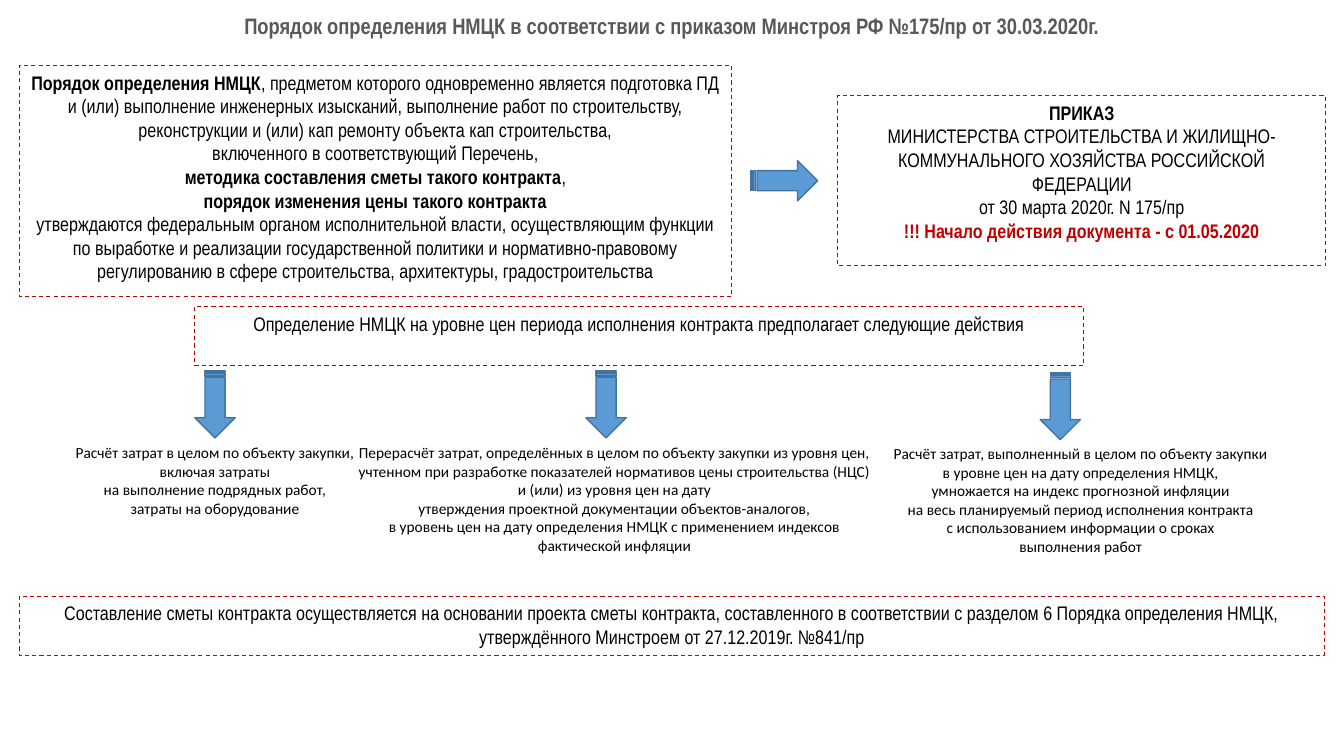
"""Build a slide on how the initial maximum contract price is set."""
from pptx import Presentation
from pptx.dml.color import RGBColor
from pptx.enum.dml import MSO_LINE
from pptx.enum.shapes import MSO_SHAPE
from pptx.enum.text import MSO_ANCHOR, MSO_AUTO_SIZE, PP_ALIGN
from pptx.util import Pt

RECT, ARROW = MSO_SHAPE.RECTANGLE, MSO_SHAPE.STRIPED_RIGHT_ARROW
TOP, BOTTOM = MSO_ANCHOR.TOP, MSO_ANCHOR.BOTTOM
GROW, FIXED = MSO_AUTO_SIZE.SHAPE_TO_FIT_TEXT, MSO_AUTO_SIZE.NONE
DASH, CENTER = MSO_LINE.DASH, PP_ALIGN.CENTER

COLORS = {"black": "000000", "gray": "595959", "red": "C00000",
          "blue": "5B9BD5", "edge": "43739E"}
RUNS = {"plain": (False, "black"), "bold": (True, "black"),
        "red": (True, "red"), "title": (True, "gray")}
NARROW = {"name": "Arial Narrow", "size": Pt(14)}
HEAD = {"name": "Arial Narrow", "size": Pt(16)}
SMALL = {"name": "Calibri", "size": Pt(11)}


def color(name):
    return RGBColor.from_string(COLORS[name])


def write(shape, lines, form, frame):
    """Fill a shape with centred lines, each a string or a list of runs."""
    body = shape.text_frame
    for key, value in frame.items():
        setattr(body, key, value)
    for i, line in enumerate(lines):
        para = body.paragraphs[0] if i == 0 else body.add_paragraph()
        para.alignment = CENTER
        runs = [(line, "plain")] if isinstance(line, str) else line
        for text, kind in runs:
            run = para.add_run()
            run.text = text
            bold, tint = RUNS[kind]
            for key, value in {**form, "bold": bold}.items():
                setattr(run.font, key, value)
            run.font.color.rgb = color(tint)


deck = Presentation()
deck.slide_width, deck.slide_height = Pt(960), Pt(540)
slide = deck.slides.add_slide(deck.slide_layouts[6])
shapes = slide.shapes

title = shapes.add_textbox(0, 0, Pt(960), Pt(31.7))
write(title, [[("Порядок определения НМЦК в соответствии с приказом Минстроя РФ "
                "№175/пр от 30.03.2020г.", "title")]], HEAD,
      {"word_wrap": True, "vertical_anchor": BOTTOM, "auto_size": FIXED})
title.text_frame.paragraphs[0].line_spacing = 0.9

boxes = [
    ((598.5, 68.5, 348.5, 121.5), [
        [("ПРИКАЗ", "bold")],
        "МИНИСТЕРСТВА СТРОИТЕЛЬСТВА И ЖИЛИЩНО-КОММУНАЛЬНОГО ХОЗЯЙСТВА "
        "РОССИЙСКОЙ ФЕДЕРАЦИИ",
        "от 30 марта 2020г. N 175/пр",
        [("!!! Начало действия документа - с 01.05.2020", "red")]]),
    ((13.7, 47, 509, 165), [
        [("Порядок определения НМЦК", "bold"),
         (", предметом которого одновременно является подготовка ПД и (или) "
          "выполнение инженерных изысканий, выполнение работ по строительству, "
          "реконструкции и (или) кап ремонту объекта кап строительства,", "plain")],
        "включенного в соответствующий Перечень,",
        [("методика составления сметы такого контракта", "bold"), (",", "plain")],
        [("порядок изменения цены такого контракта", "bold")],
        "утверждаются федеральным органом исполнительной власти, осуществляющим "
        "функции по выработке и реализации государственной политики и "
        "нормативно-правовому регулированию в сфере строительства, архитектуры, "
        "градостроительства"]),
    ((139, 219, 635, 42), [
        "Определение НМЦК на уровне цен периода исполнения контракта "
        "предполагает следующие действия"]),
    ((13.7, 426, 932.5, 42), [
        "Составление сметы контракта осуществляется на основании проекта сметы "
        "контракта, составленного в соответствии с разделом 6 Порядка определения "
        "НМЦК, утверждённого Минстроем от 27.12.2019г. №841/пр"]),
]
for place, lines in boxes:
    box = shapes.add_shape(RECT, *map(Pt, place))
    box.shadow.inherit = False
    box.fill.background()
    box.line.color.rgb = color("red")
    box.line.width = Pt(0.75)
    box.line.dash_style = DASH
    write(box, lines, NARROW, {"word_wrap": True, "vertical_anchor": TOP})

for left, top, turn in [(536.3, 114.7, 0), (129.7, 274.5, 90),
                        (409, 274.5, 90), (733.5, 275.8, 90)]:
    arrow = shapes.add_shape(ARROW, Pt(left), Pt(top), Pt(47.8), Pt(28.8))
    arrow.rotation = turn
    arrow.shadow.inherit = False
    arrow.fill.solid()
    arrow.fill.fore_color.rgb = color("blue")
    arrow.line.color.rgb = color("edge")
    arrow.line.width = Pt(1)

steps = [
    ((44.6, 313, 218, 60.5), False, [
        "Расчёт затрат в целом по объекту закупки,",
        "включая затраты",
        "на выполнение подрядных работ,",
        "затраты на оборудование"]),
    ((244, 313, 390, 87), True, [
        "Перерасчёт затрат, определённых в целом по объекту закупки из уровня цен,",
        "учтенном при разработке показателей нормативов цены строительства (НЦС)",
        "и (или) из уровня цен на дату",
        "утверждения проектной документации объектов-аналогов,",
        "в уровень цен на дату определения НМЦК с применением индексов "
        "фактической инфляции"]),
    ((629.5, 314, 285, 87), False, [
        "Расчёт затрат, выполненный в целом по объекту закупки",
        "в уровне цен на дату определения НМЦК,",
        "умножается на индекс прогнозной инфляции",
        "на весь планируемый период исполнения контракта",
        "с использованием информации о сроках",
        "выполнения работ"]),
]
for place, wrap, lines in steps:
    step = shapes.add_textbox(*map(Pt, place))
    write(step, lines, SMALL, {"word_wrap": wrap, "auto_size": GROW})

deck.save("out.pptx")
